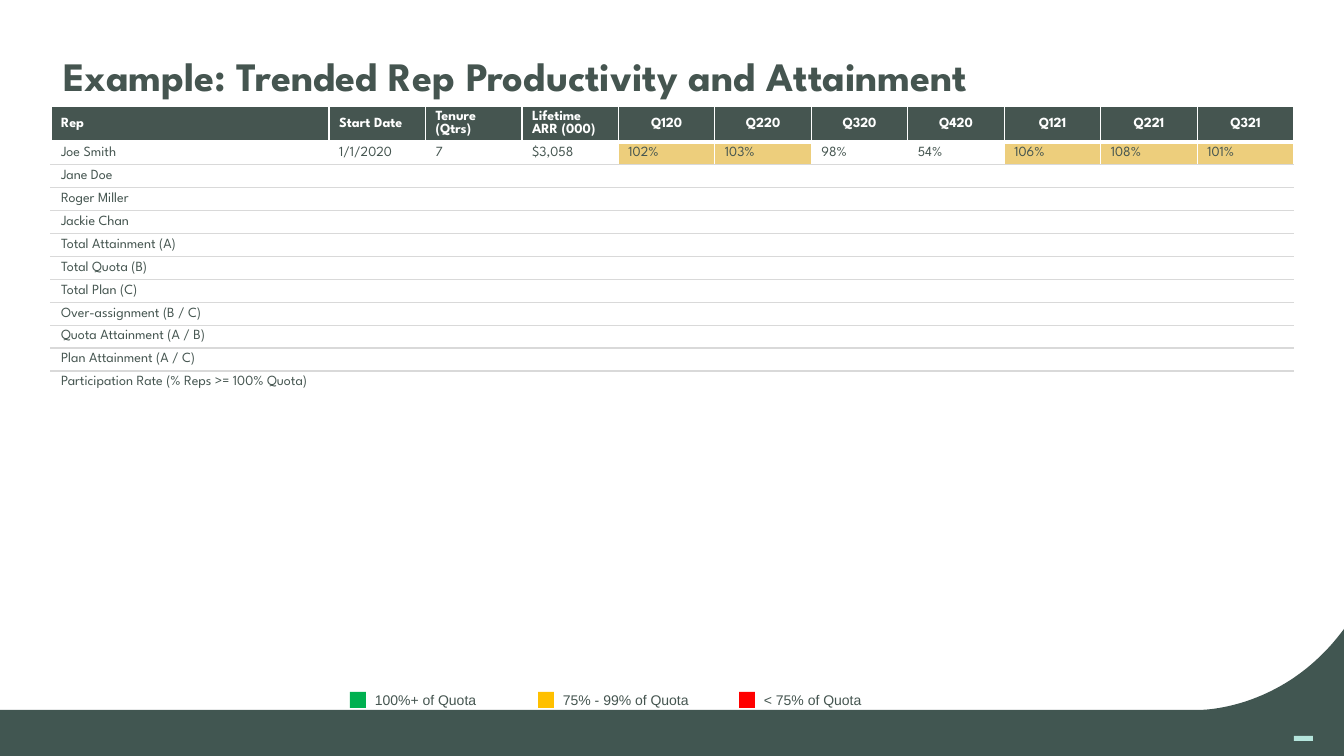
from lxml import etree
from pptx import Presentation
from pptx.dml.color import RGBColor
from pptx.enum.shapes import MSO_SHAPE
from pptx.enum.text import MSO_ANCHOR, PP_ALIGN
from pptx.oxml.ns import qn
from pptx.util import Emu, Pt

RECTANGLE = MSO_SHAPE.RECTANGLE
MIDDLE, TOP = MSO_ANCHOR.MIDDLE, MSO_ANCHOR.TOP
LEFT, CENTER = PP_ALIGN.LEFT, PP_ALIGN.CENTER

SLIDE_W, SLIDE_H = 1344, 756
EMU_PER_PX = 12192000 / SLIDE_W
HEADING_FONT, LEGEND_FONT = "League Spartan", "Arial"
COLORS = {
    "ink": "455550", "footer": "415651", "mint": "B5E5DC", "white": "FFFFFF",
    "rule": "D9D9D9", "highlight": "EDCE7C",
    "green": "00B050", "amber": "FFC000", "red": "FF0000",
}

HEADERS = ["Rep", "Start Date", "Tenure (Qtrs)", "Lifetime ARR (000)",
           "Q120", "Q220", "Q320", "Q420", "Q121", "Q221", "Q321"]
FIRST_QUARTER = 4
JOE_SMITH = ["Joe Smith", "1/1/2020", "7", "$3,058",
             "102%", "103%", "98%", "54%", "106%", "108%", "101%"]
OTHER_ROWS = ["Jane Doe", "Roger Miller", "Jackie Chan", "Total Attainment (A)",
              "Total Quota (B)", "Total Plan (C)", "Over-assignment (B / C)",
              "Quota Attainment (A / B)", "Plan Attainment (A / C)",
              "Participation Rate (% Reps >= 100% Quota)"]
LEGEND = [(350, 375, "green", "100%+ of Quota"),
          (538, 563, "amber", "75% - 99% of Quota"),
          (739, 764, "red", "< 75% of Quota")]


def px(length):
    return Emu(round(length * EMU_PER_PX))


def rgb(name):
    return RGBColor.from_string(COLORS[name])


def paint(shape, color):
    shape.shadow.inherit = False
    shape.fill.solid()
    shape.fill.fore_color.rgb = rgb(color)
    shape.line.fill.background()


def add_block(slide, left, top, width, height, color):
    block = slide.shapes.add_shape(RECTANGLE, px(left), px(top), px(width), px(height))
    paint(block, color)


def add_run(paragraph, text, size, font, color, bold=False):
    run = paragraph.add_run()
    run.text = text
    run.font.size = Pt(size)
    run.font.name = font
    run.font.bold = bold
    run.font.color.rgb = rgb(color)


def add_label(slide, left, top, width, height, spacing, text, size, font, bold=False):
    frame = slide.shapes.add_textbox(px(left), px(top), px(width), px(height)).text_frame
    frame.word_wrap = True
    frame.vertical_anchor = MIDDLE
    frame.margin_left = frame.margin_right = frame.margin_top = frame.margin_bottom = 0
    paragraph = frame.paragraphs[0]
    paragraph.line_spacing = spacing
    add_run(paragraph, text, size, font, "ink", bold)


def add_footer(slide):
    # Cubic curve rising from the band to the right edge
    start, bend, lift, end = (1198, 710), (1198, 710), (1283, 712), (SLIDE_W, 629)
    steps = 40
    curve = []
    for step in range(steps + 1):
        t = step / steps
        weights = ((1 - t) ** 3, 3 * t * (1 - t) ** 2, 3 * t * t * (1 - t), t ** 3)
        curve.append(tuple(
            px(sum(w * point[axis] for w, point in zip(weights, (start, bend, lift, end))))
            for axis in (0, 1)))
    builder = slide.shapes.build_freeform(0, px(SLIDE_H), scale=1.0)
    builder.add_line_segments([(0, px(710)), *curve, (px(SLIDE_W), px(SLIDE_H))], close=True)
    paint(builder.convert_to_shape(), "footer")


def set_borders(cell, top, bottom, bottom_width):
    sides = [("a:lnL", "white", 1), ("a:lnR", "white", 1),
             ("a:lnT", top, 1), ("a:lnB", bottom, bottom_width)]
    properties = cell._tc.get_or_add_tcPr()
    for position, (tag, color, width) in enumerate(sides):
        line = etree.Element(qn(tag), w=str(Pt(width)))
        fill = etree.SubElement(line, qn("a:solidFill"))
        etree.SubElement(fill, qn("a:srgbClr"), val=COLORS[color])
        properties.insert(position, line)


def fill_cell(cell, text, color, bold, fill, anchor, align, margin_top):
    cell.vertical_anchor = anchor
    cell.margin_top, cell.margin_bottom = px(margin_top), 0
    if fill:
        cell.fill.solid()
        cell.fill.fore_color.rgb = rgb(fill)
    else:
        cell.fill.background()
    paragraph = cell.text_frame.paragraphs[0]
    paragraph.alignment = align
    if text:
        add_run(paragraph, text, 10, HEADING_FONT, color, bold)
    else:
        # Keeps empty cells as low as the filled ones
        end = etree.SubElement(paragraph._p, qn("a:endParaRPr"), sz="1000")
        etree.SubElement(end, qn("a:latin"), typeface=HEADING_FONT)


def add_rep_table(slide):
    rows = [HEADERS, JOE_SMITH]
    rows += [[name] + [""] * (len(HEADERS) - 1) for name in OTHER_ROWS]
    last = len(rows) - 1
    width, rep_width, header_height, body_height = 1243, 278, 36, 252
    table = slide.shapes.add_table(
        len(rows), len(HEADERS), px(51), px(106), px(width),
        px(header_height + body_height)).table
    table.first_row = table.horz_banding = False
    for c, column in enumerate(table.columns):
        column.width = px((width - rep_width) / (len(HEADERS) - 1) if c else rep_width)
    for r, values in enumerate(rows):
        table.rows[r].height = px(body_height / last if r else header_height)
        for c, text in enumerate(values):
            cell = table.cell(r, c)
            if r == 0:
                align = CENTER if c >= FIRST_QUARTER else LEFT
                fill_cell(cell, text, "white", True, "ink", MIDDLE, align, 0)
                set_borders(cell, "white", "white", 3)
                continue
            reached = text.endswith("%") and int(text[:-1]) >= 100
            fill_cell(cell, text, "ink", False, "highlight" if reached else None, TOP, LEFT, 5)
            set_borders(cell, "white" if r == 1 else "rule",
                        "white" if r == last else "rule", 1)


def main():
    prs = Presentation()
    prs.slide_width, prs.slide_height = px(SLIDE_W), px(SLIDE_H)
    slide = prs.slides.add_slide(prs.slide_layouts[6])

    # Footer band and its mark
    add_footer(slide)
    add_block(slide, 1294, 736, 19, 5, "mint")

    # Title and table
    add_label(slide, 63, 50, 1189, 57, 0.9,
              "Example: Trended Rep Productivity and Attainment", 28.8, HEADING_FONT, True)
    add_rep_table(slide)

    # Legend
    for swatch_left, text_left, color, text in LEGEND:
        add_block(slide, swatch_left, 692, 16, 16, color)
        add_label(slide, text_left, 693, 150, 16, 0.95, text, 10, LEGEND_FONT)

    prs.save("out.pptx")


if __name__ == "__main__":
    main()
